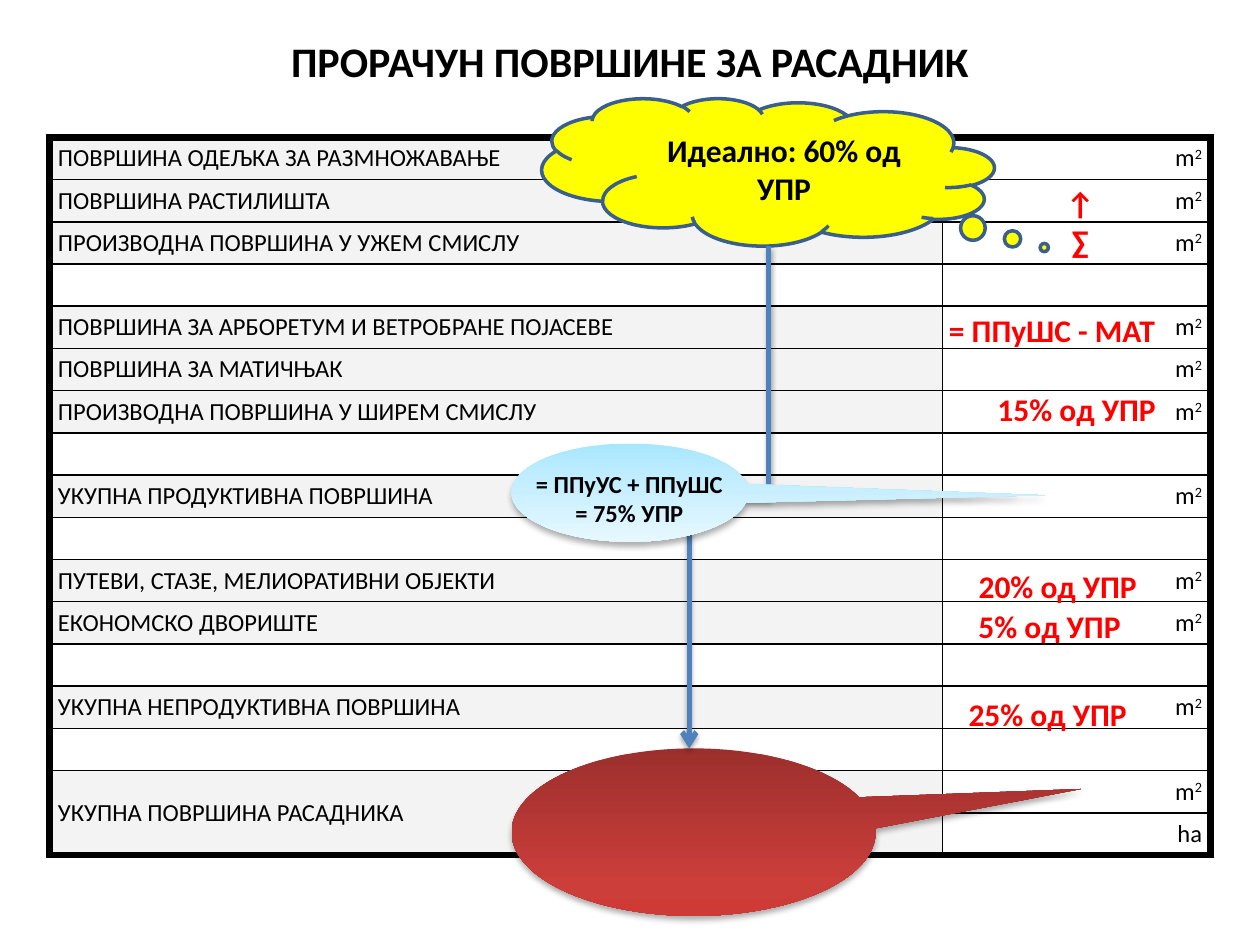
from typing import NamedTuple

from pptx import Presentation
from pptx.dml.color import RGBColor
from pptx.enum.shapes import MSO_CONNECTOR, MSO_SHAPE
from pptx.enum.text import MSO_ANCHOR, MSO_AUTO_SIZE, PP_ALIGN
from pptx.oxml import parse_xml
from pptx.oxml.ns import nsdecls
from pptx.util import Pt

PX = 9144  # 100 px to the inch
FONT = "Calibri"
BLACK, RED, GREY, YELLOW = "000000", "FF0000", "F3F3F3", "FFFF00"
THIN, THICK = 1, 4.5
MID = MSO_ANCHOR.MIDDLE
LEFT, RIGHT, CENTER = PP_ALIGN.JUSTIFY, PP_ALIGN.RIGHT, PP_ALIGN.CENTER
CLOUD, OVAL = MSO_SHAPE.CLOUD_CALLOUT, MSO_SHAPE.OVAL_CALLOUT
ELBOW = MSO_CONNECTOR.ELBOW

ROWS = [
    "ПОВРШИНА ОДЕЉКА ЗА РАЗМНОЖАВАЊЕ",
    "ПОВРШИНА РАСТИЛИШТА",
    "ПРОИЗВОДНА ПОВРШИНА У УЖЕМ СМИСЛУ",
    "",
    "ПОВРШИНА ЗА АРБОРЕТУМ И ВЕТРОБРАНЕ ПОЈАСЕВЕ",
    "ПОВРШИНА ЗА МАТИЧЊАК",
    "ПРОИЗВОДНА ПОВРШИНА У ШИРЕМ СМИСЛУ",
    "",
    "УКУПНА ПРОДУКТИВНА ПОВРШИНА",
    "",
    "ПУТЕВИ, СТАЗЕ, МЕЛИОРАТИВНИ ОБЈЕКТИ",
    "ЕКОНОМСКО ДВОРИШТЕ",
    "",
    "УКУПНА НЕПРОДУКТИВНА ПОВРШИНА",
    "",
    "УКУПНА ПОВРШИНА РАСАДНИКА",
    "",
]
LAST = len(ROWS) - 1


class Box(NamedTuple):
    x: int
    y: int
    w: int
    h: int

    def emu(self) -> list[int]:
        return [v * PX for v in self]


class Label(NamedTuple):
    text: str
    box: Box
    size: int = 18
    color: str = RED
    wrap: bool = False


class Bubble(NamedTuple):
    box: Box
    tip: tuple[float, float]
    stops: list[tuple[int, str]]


TITLE = Label("ПРОРАЧУН ПОВРШИНЕ ЗА РАСАДНИК", Box(0, 23, 1000, 50), 24, BLACK, True)
SUM = Label("= ППуУС + ППуШС\n= 75% УПР", Box(320, 367, 359, 57), 14, BLACK, True)
NOTES = [
    Label("15% од УПР", Box(781, 305, 147, 40)),
    Label("= ППуШС - МАТ", Box(742, 242, 186, 40)),
    Label("20% од УПР", Box(766, 445, 147, 40)),
    Label("5% од УПР", Box(766, 477, 134, 40)),
    Label("25% од УПР", Box(758, 547, 147, 40)),
]
ARROW = Label("↑\n∑", Box(836, 141, 43, 71))
TOTAL = Bubble(Box(406, 594, 289, 133), (-1.065, 0.258),
               [(0, "9C2F2D"), (80, "CB3E3A"), (100, "CE3B37")])
PART = Bubble(Box(406, 352, 188, 78), (-1.753, -0.027),
              [(0, "A7E6FF"), (35, "C1EDFF"), (100, "E7F8FF")])


def rgb(code: str) -> RGBColor:
    return RGBColor.from_string(code)


def style(frame, size: int, color: str, align, bold: bool) -> None:
    for para in frame.paragraphs:
        para.alignment = align
        for run in para.runs:
            font = run.font
            font.name, font.size, font.bold = FONT, Pt(size), bold
            font.color.rgb = rgb(color)


def add_label(shapes, label: Label) -> None:
    frame = shapes.add_textbox(*label.box.emu()).text_frame
    frame.text = label.text
    frame.word_wrap = label.wrap
    frame.auto_size = MSO_AUTO_SIZE.SHAPE_TO_FIT_TEXT
    style(frame, label.size, label.color, CENTER, True)


def shadow(alpha: int, blur: float, dist: float):
    return parse_xml(
        f'<a:effectLst {nsdecls("a")}><a:outerShdw blurRad="{Pt(blur)}" '
        f'dist="{Pt(dist)}" dir="5400000" rotWithShape="0"><a:srgbClr val="{BLACK}">'
        f'<a:alpha val="{alpha * 1000}"/></a:srgbClr></a:outerShdw></a:effectLst>')


def edge(cell, side: str, width: float) -> None:
    cell._tc.get_or_add_tcPr().append(parse_xml(
        f'<a:ln{side} {nsdecls("a")} w="{Pt(width)}"><a:solidFill>'
        f'<a:srgbClr val="{BLACK}"/></a:solidFill></a:ln{side}>'))


def fill_cell(cell, row: int, col: int) -> None:
    cell.vertical_anchor = MID
    cell.margin_left = cell.margin_right = 7 * PX
    cell.margin_top = cell.margin_bottom = 0
    low = row == LAST or (row == LAST - 1 and col == 0)
    for side, thick in (("L", col == 0), ("R", col == 1), ("T", row == 0), ("B", low)):
        edge(cell, side, THICK if thick else THIN)
    name = ROWS[row]
    if name and col == 0:
        cell.fill.solid()
        cell.fill.fore_color.rgb = rgb(GREY)
        cell.text_frame.text = name
    else:
        cell.fill.background()
    if col == 1 and row == LAST:
        cell.text_frame.text = "ha"
    elif col == 1 and name:
        cell.text_frame.text = "m"
        power = cell.text_frame.paragraphs[0].add_run()
        power.text = "2"
        power._r.get_or_add_rPr().set("baseline", "30000")
    style(cell.text_frame, 14, BLACK, RIGHT if col else LEFT, False)


def add_grid(shapes) -> None:
    box = Box(39, 109, 922, 570)
    grid = shapes.add_table(len(ROWS), 2, *box.emu()).table
    grid.first_row = grid.horz_banding = False
    for col, width in zip(grid.columns, (709, 213)):
        col.width = width * PX
    for r, row in enumerate(grid.rows):
        row.height = box.h * PX // len(ROWS)
        for c in range(2):
            fill_cell(grid.cell(r, c), r, c)
    grid.cell(LAST - 1, 0).merge(grid.cell(LAST, 0))


def add_callout(shapes, kind, box: Box, tip: tuple[float, float], flips: tuple):
    shape = shapes.add_shape(kind, *box.emu())
    shape.shadow.inherit = False
    for i, value in enumerate(tip):
        shape.adjustments[i] = value
    for flip in flips:
        shape.element.spPr.xfrm.set(flip, "1")
    return shape


def add_cloud(shapes) -> None:
    cloud = add_callout(shapes, CLOUD, Box(430, 78, 359, 117), (-0.611, 0.513), ("flipH",))
    cloud.fill.solid()
    cloud.fill.fore_color.rgb = rgb(YELLOW)
    cloud.line.color.rgb = rgb("3A5F8C")
    cloud.line.width = Pt(2)
    frame = cloud.text_frame
    frame.text = "Идеално: 60% од УПР"
    frame.word_wrap, frame.vertical_anchor = True, MID
    style(frame, 18, BLACK, CENTER, True)


def add_bubble(shapes, bubble: Bubble) -> None:
    shape = add_callout(shapes, OVAL, bubble.box, bubble.tip, ("flipH", "flipV"))
    shape.line.fill.background()
    stops = "".join(f'<a:gs pos="{pos * 1000}"><a:srgbClr val="{color}"/></a:gs>'
                    for pos, color in bubble.stops)
    props = shape.element.spPr
    props.prstGeom.addnext(parse_xml(
        f'<a:gradFill {nsdecls("a")} rotWithShape="1"><a:gsLst>{stops}</a:gsLst>'
        '<a:lin ang="16200000" scaled="0"/></a:gradFill>'))
    props.replace(props[-1], shadow(32, 3.5, 2.2))


def add_link(shapes) -> None:
    """Elbow from the cloud down to the total, turned a quarter."""
    link = shapes.add_connector(ELBOW, 379 * PX, 363 * PX, 778 * PX, 426 * PX)
    link.line.color.rgb = rgb("4F81BD")
    link.line.width = Pt(3)
    props = link.element.spPr
    props.xfrm.set("rot", "5400000")
    props.ln.append(parse_xml(f'<a:tailEnd {nsdecls("a")} type="arrow"/>'))
    props.append(shadow(35, 3.1, 1.8))


def main() -> None:
    deck = Presentation()
    deck.slide_width, deck.slide_height = 1000 * PX, 750 * PX
    shapes = deck.slides.add_slide(deck.slide_layouts[6]).shapes
    add_label(shapes, TITLE)
    add_grid(shapes)
    add_label(shapes, ARROW)
    add_cloud(shapes)
    add_bubble(shapes, TOTAL)
    add_link(shapes)
    add_bubble(shapes, PART)
    for label in (SUM, *NOTES):
        add_label(shapes, label)
    deck.save("out.pptx")


if __name__ == "__main__":
    main()
